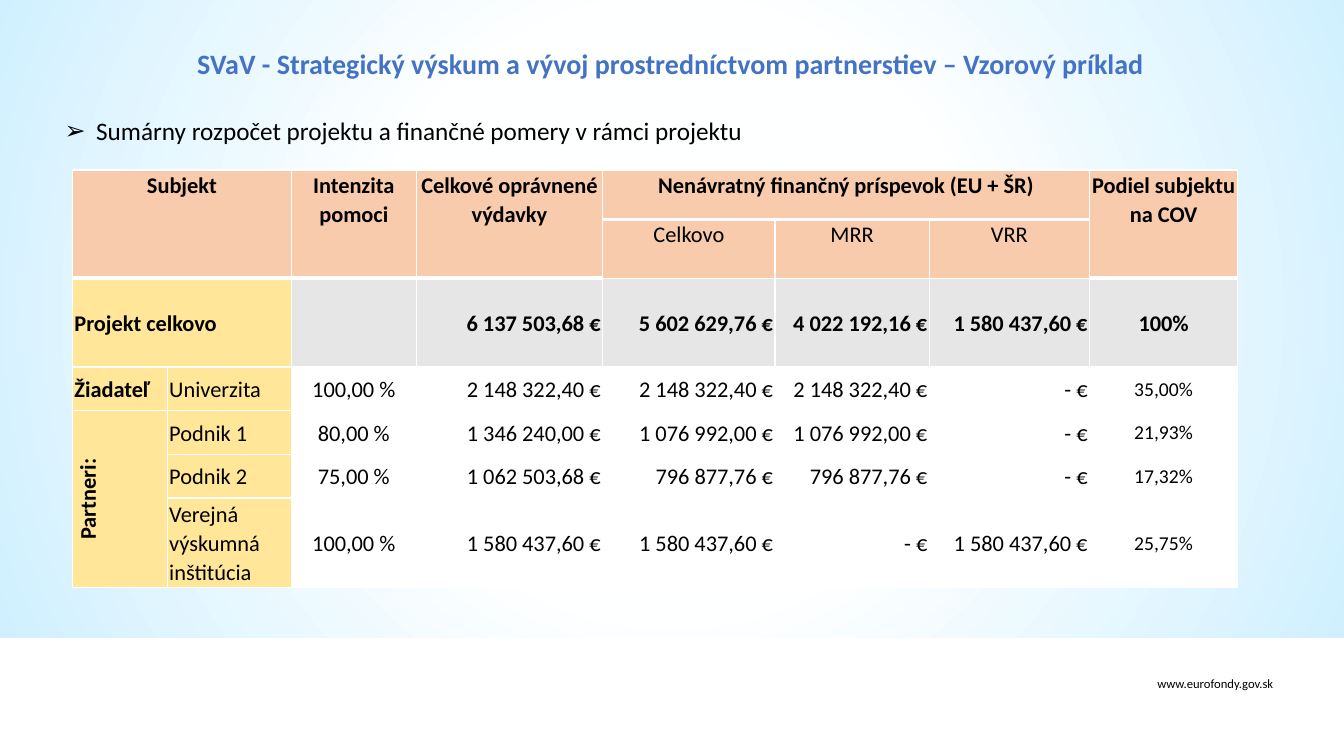
from lxml.etree import SubElement
from pptx import Presentation
from pptx.dml.color import RGBColor
from pptx.enum.shapes import MSO_SHAPE
from pptx.enum.text import MSO_ANCHOR, MSO_AUTO_SIZE, PP_ALIGN
from pptx.oxml import parse_xml
from pptx.oxml.ns import qn
from pptx.util import Pt

BLACK = RGBColor(0x00, 0x00, 0x00)
WHITE = RGBColor(0xFF, 0xFF, 0xFF)
BLUE = RGBColor(0x44, 0x72, 0xC4)
PEACH = RGBColor(0xF8, 0xCB, 0xAD)
YELLOW = RGBColor(0xFF, 0xE6, 0x99)
GREY = RGBColor(0xE7, 0xE6, 0xE6)
GLOW_CENTRE = RGBColor(0xFE, 0xFF, 0xFF)
GLOW_EDGE = RGBColor(0xD0, 0xF0, 0xFF)

TITLE = "SVaV - Strategický výskum a vývoj prostredníctvom partnerstiev – Vzorový príklad"
SUBTITLE = "Sumárny rozpočet projektu a finančné pomery v rámci projektu"
WEBSITE = "www.eurofondy.gov.sk"

BUDGET = [
    ["Subjekt", "", "Intenzita pomoci", "Celkové oprávnené výdavky",
     "Nenávratný finančný príspevok (EU + ŠR)", "", "", "Podiel subjektu na COV"],
    ["", "", "", "", "Celkovo", "MRR", "VRR", ""],
    ["Projekt celkovo", "", "", "6 137 503,68 €", "5 602 629,76 €",
     "4 022 192,16 €", "1 580 437,60 €", "100%"],
    ["Žiadateľ", "Univerzita", "100,00 %", "2 148 322,40 €", "2 148 322,40 €",
     "2 148 322,40 €", "- €", "35,00%"],
    ["Partneri:", "Podnik 1", "80,00 %", "1 346 240,00 €", "1 076 992,00 €",
     "1 076 992,00 €", "- €", "21,93%"],
    ["", "Podnik 2", "75,00 %", "1 062 503,68 €", "796 877,76 €",
     "796 877,76 €", "- €", "17,32%"],
    ["", "Verejná výskumná inštitúcia", "100,00 %", "1 580 437,60 €", "1 580 437,60 €",
     "- €", "1 580 437,60 €", "25,75%"],
]
# (first row, first column, last row, last column)
MERGES = [(0, 0, 1, 1), (0, 2, 1, 2), (0, 3, 1, 3), (0, 4, 0, 6), (0, 7, 1, 7),
          (2, 0, 2, 1), (4, 0, 6, 0)]
COLUMN_WIDTHS = [67.7, 88.6, 89.3, 133.2, 123.1, 110.2, 114.5, 105.8]
ROW_HEIGHTS = [35.3, 41, 63.5, 31.2, 31.2, 31.2, 64.1]
TABLE_LEFT, TABLE_TOP = 51.8, 121.5
TOTAL_ROW, PARTNERS_ROW = 2, 4
SHARE_COLUMN = 7


def place(part, left, top, width, height):
    part.left, part.top, part.width, part.height = map(Pt, (left, top, width, height))


def write(frame, text, size=16, bold=False, color=BLACK, align=PP_ALIGN.LEFT,
          spacing=None, after=0, bullet=None, indent=0):
    frame.word_wrap = True
    paragraph = frame.paragraphs[0]
    paragraph.text = text
    paragraph.alignment = align
    paragraph.space_before, paragraph.space_after = Pt(0), Pt(after)
    if spacing:
        paragraph.line_spacing = spacing
    if bullet:
        properties = paragraph._p.get_or_add_pPr()
        properties.set("marL", str(Pt(indent)))
        properties.set("indent", str(-Pt(indent)))
        SubElement(properties, qn("a:buChar")).set("char", bullet)
    font = paragraph.runs[0].font
    font.name, font.size, font.bold = "Calibri", Pt(size), bold
    font.color.rgb = color


def add_glow(slide):
    glow = slide.shapes.add_shape(MSO_SHAPE.RECTANGLE, Pt(0), Pt(-10.8), Pt(961), Pt(466.5))
    glow.shadow.inherit = False
    glow.line.fill.background()
    glow.fill.gradient()
    stops = "".join(
        f'<a:gs pos="{position * 1000}"><a:srgbClr val="{color}"/></a:gs>'
        for position, color in [(0, GLOW_CENTRE), (40, GLOW_CENTRE), (100, GLOW_EDGE)])
    linear = glow.element.spPr.find(qn("a:gradFill"))
    linear.getparent().replace(linear, parse_xml(
        '<a:gradFill xmlns:a="http://schemas.openxmlformats.org/drawingml/2006/main" '
        f'rotWithShape="1"><a:gsLst>{stops}</a:gsLst><a:path path="circle">'
        '<a:fillToRect l="50000" t="50000" r="50000" b="50000"/></a:path></a:gradFill>'))
    # Behind the placeholders: the first two children of the tree are its properties
    glow.element.getparent().insert(2, glow.element)


def set_borders(cell, bottom):
    properties = cell._tc.get_or_add_tcPr()
    for side, width in (("L", 1), ("R", 1), ("T", 1), ("B", bottom)):
        line = SubElement(properties, qn(f"a:ln{side}"), w=str(Pt(width)))
        fill = SubElement(line, qn("a:solidFill"))
        SubElement(fill, qn("a:srgbClr"), val=str(WHITE))


def cell_color(row, column):
    if row < TOTAL_ROW:
        return PEACH
    if column < 2:
        return YELLOW
    return GREY if row == TOTAL_ROW else WHITE


def cell_align(row, column):
    if row < TOTAL_ROW or column in (2, SHARE_COLUMN) or (row, column) == (PARTNERS_ROW, 0):
        return PP_ALIGN.CENTER
    return PP_ALIGN.LEFT if column < 2 else PP_ALIGN.RIGHT


def fill_cell(cell, row, column, text):
    is_share = column == SHARE_COLUMN and row > TOTAL_ROW
    is_partners = (row, column) == (PARTNERS_ROW, 0)
    set_borders(cell, bottom=3 if row == 0 or (row == 1 and cell.is_spanned) else 1)
    cell.fill.solid()
    cell.fill.fore_color.rgb = cell_color(row, column)
    cell.margin_left = cell.margin_right = Pt(0.7 if is_share else 1.4)
    cell.margin_top, cell.margin_bottom = Pt(0.7 if is_share else 0), Pt(0)
    at_top = row < TOTAL_ROW or is_partners
    cell.vertical_anchor = MSO_ANCHOR.TOP if at_top else MSO_ANCHOR.MIDDLE
    if is_partners:
        cell._tc.get_or_add_tcPr().set("vert", "vert270")
    if text:
        write(cell.text_frame, text, size=14 if is_share else 16,
              bold=row in (0, TOTAL_ROW) or (column == 0 and row > 0),
              align=cell_align(row, column), spacing=None if is_share else 1.07)


def add_budget(slide):
    budget = slide.shapes.add_table(
        len(ROW_HEIGHTS), len(COLUMN_WIDTHS), Pt(TABLE_LEFT), Pt(TABLE_TOP),
        Pt(sum(COLUMN_WIDTHS)), Pt(sum(ROW_HEIGHTS))).table
    budget.first_row = budget.horz_banding = False
    for column, width in zip(budget.columns, COLUMN_WIDTHS):
        column.width = Pt(width)
    for row, height in zip(budget.rows, ROW_HEIGHTS):
        row.height = Pt(height)
    for top, left, bottom, right in MERGES:
        budget.cell(top, left).merge(budget.cell(bottom, right))
    for row, texts in enumerate(BUDGET):
        for column, text in enumerate(texts):
            fill_cell(budget.cell(row, column), row, column, text)


def main():
    deck = Presentation()
    deck.slide_width, deck.slide_height = Pt(960), Pt(540)
    slide = deck.slides.add_slide(deck.slide_layouts[1])
    add_glow(slide)

    title, subtitle = slide.placeholders
    place(title, 39, 28, 880, 34)
    place(subtitle, 39, 79, 880, 34)
    write(title.text_frame, TITLE, size=20, bold=True, color=BLUE, align=PP_ALIGN.CENTER)
    write(subtitle.text_frame, SUBTITLE, size=18, align=PP_ALIGN.JUSTIFY, after=6,
          bullet="➢", indent=22.5)
    for heading in (title, subtitle):
        heading.text_frame.auto_size = MSO_AUTO_SIZE.NONE

    add_budget(slide)
    website = slide.shapes.add_textbox(Pt(772.5), Pt(479.5), Pt(144), Pt(18))
    write(website.text_frame, WEBSITE, size=9, align=PP_ALIGN.RIGHT)
    deck.save("out.pptx")


if __name__ == "__main__":
    main()
